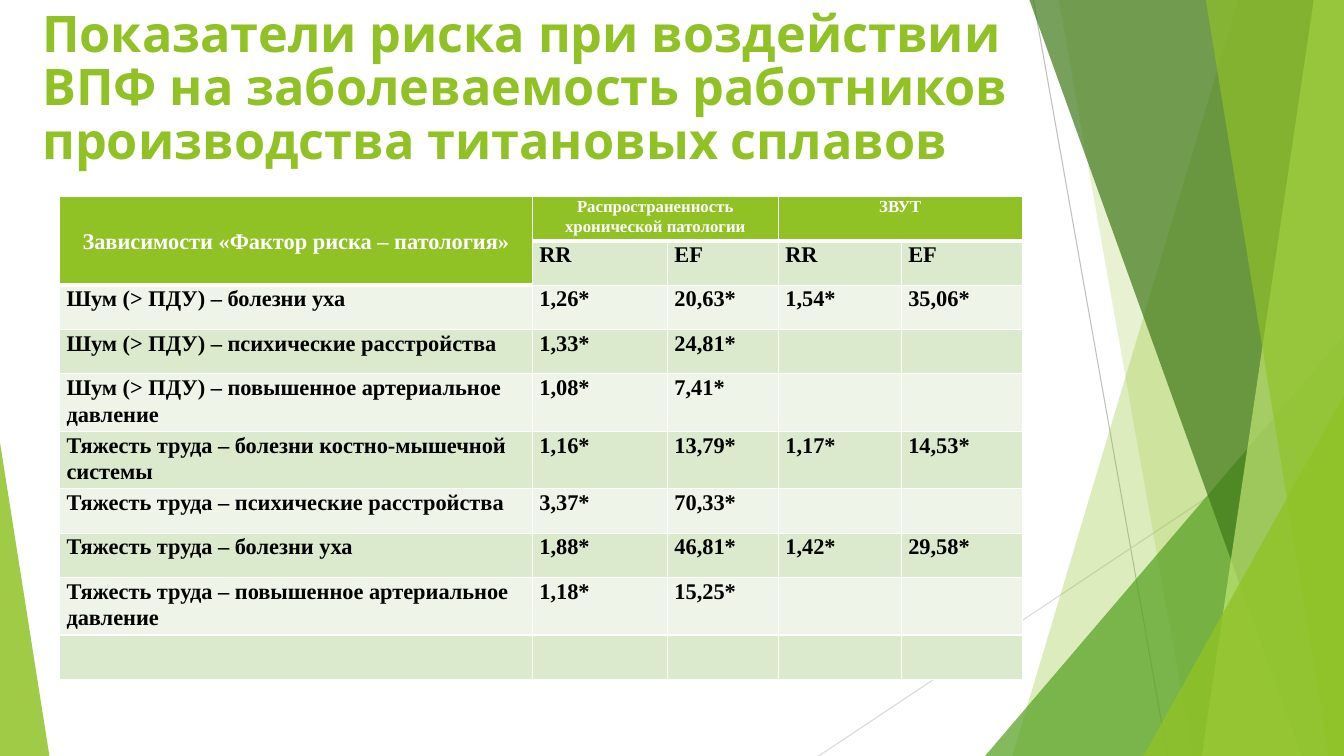
from lxml import etree
from pptx import Presentation
from pptx.dml.color import RGBColor
from pptx.enum.shapes import MSO_CONNECTOR, MSO_SHAPE
from pptx.enum.text import MSO_ANCHOR, PP_ALIGN
from pptx.oxml.ns import qn
from pptx.util import Inches, Pt

STRAIGHT = MSO_CONNECTOR.STRAIGHT
TRIANGLE = MSO_SHAPE.ISOSCELES_TRIANGLE
TOP, MIDDLE = MSO_ANCHOR.TOP, MSO_ANCHOR.MIDDLE
LEFT, CENTER = PP_ALIGN.LEFT, PP_ALIGN.CENTER
GREEN, WHITE, BLACK = "90C226", "FFFFFF", "000000"
BANDS = ["EEF4E8", "DBE9CD"]
SERIF = "Times New Roman"
W, H = 13.33, 7.5


def color(value):
    return RGBColor.from_string(value)


def paint(shape, tint, opacity):
    """Fill a shape with a partly transparent colour, without outline or shadow."""
    shape.shadow.inherit = False
    shape.line.fill.background()
    shape.fill.solid()
    shape.fill.fore_color.rgb = color(tint)
    tint_xml = shape._element.spPr.find(qn("a:solidFill"))[0]
    etree.SubElement(tint_xml, qn("a:alpha"), val=str(opacity * 1000))


prs = Presentation()
prs.slide_width, prs.slide_height = Inches(W), Inches(H)
slide = prs.slides.add_slide(prs.slide_layouts[6])
shapes = slide.shapes

# Thin lines behind the facets
for x1, y1, x2, y2, tint in [(10.25, 0, 11.58, H, "BFBFBF"), (W, 4.03, 8.12, H, "D9D9D9")]:
    ray = shapes.add_connector(STRAIGHT, Inches(x1), Inches(y1), Inches(x2), Inches(y2))
    ray.line.color.rgb = color(tint)
    ray.line.width = Pt(0.75)
    etree.SubElement(ray._element.spPr, qn("a:effectLst"))

# Facets: panes slant from a top x to a bottom x and fill up to the right edge,
# corners are right triangles standing on the bottom edge
facets = [
    ("pane", 12.28, 10.04, GREEN, 30),
    ("pane", 10.5, 11.83, GREEN, 20),
    ("corner", 9.77, 3.56, 4.17, 1, "54A021", 72),
    ("pane", 10.21, 12.91, "3F7819", 70),
    ("pane", 13.03, 11.92, "C0E474", 70),
    ("pane", 11.96, 13.18, GREEN, 65),
    ("corner", 11.34, 1.99, 3.57, 1, GREEN, 80),
    ("corner", 0, 0.49, 3.11, 0, GREEN, 85),
]
for kind, *measures, tint, opacity in facets:
    if kind == "pane":
        top_x, bottom_x = measures
        outline = shapes.build_freeform(Inches(top_x), 0, scale=1.0)
        outline.add_line_segments(
            [(Inches(x), Inches(y)) for x, y in [(W, 0), (W, H), (bottom_x, H)]], close=True)
        facet = outline.convert_to_shape()
    else:
        left, width, height, apex = measures
        facet = shapes.add_shape(
            TRIANGLE, Inches(left), Inches(H - height), Inches(width), Inches(height))
        facet.adjustments[0] = apex
    paint(facet, tint, opacity)

# Title
title = shapes.add_textbox(Inches(0.32), 0, Inches(9.82), Inches(2.11)).text_frame
title.word_wrap = True
title.vertical_anchor = TOP
title.margin_top = Inches(0.1)
heading = title.paragraphs[0]
heading.line_spacing = 0.88
run = heading.add_run()
run.text = ("Показатели риска при воздействии ВПФ на заболеваемость "
            "работников производства титановых сплавов")
run.font.name, run.font.size, run.font.bold = "Karla", Pt(36), True
run.font.color.rgb = color(GREEN)

# Risk table
risks = [
    ["Зависимости «Фактор риска – патология»",
     "Распространенность хронической патологии", "", "ЗВУТ", ""],
    ["", "RR", "EF", "RR", "EF"],
    ["Шум (> ПДУ) – болезни уха", "1,26*", "20,63*", "1,54*", "35,06*"],
    ["Шум (> ПДУ) – психические расстройства", "1,33*", "24,81*", "", ""],
    ["Шум (> ПДУ) – повышенное артериальное давление", "1,08*", "7,41*", "", ""],
    ["Тяжесть труда – болезни костно-мышечной системы",
     "1,16*", "13,79*", "1,17*", "14,53*"],
    ["Тяжесть труда – психические расстройства", "3,37*", "70,33*", "", ""],
    ["Тяжесть труда – болезни уха", "1,88*", "46,81*", "1,42*", "29,58*"],
    ["Тяжесть труда – повышенное артериальное давление", "1,18*", "15,25*", "", ""],
    [""] * 5,
]
column_widths = [4.69, 1.34, 1.1, 1.22, 1.2]
row_height = 0.44
table = shapes.add_table(
    len(risks), len(column_widths), Inches(0.59), Inches(1.95),
    Inches(sum(column_widths)), Inches(row_height * len(risks))).table
table.first_row = table.horz_banding = False
for column, width in zip(table.columns, column_widths):
    column.width = Inches(width)
for row in table.rows:
    row.height = Inches(row_height)
for (r1, c1), (r2, c2) in [((0, 0), (1, 0)), ((0, 1), (0, 2)), ((0, 3), (0, 4))]:
    table.cell(r1, c1).merge(table.cell(r2, c2))

for r, row in enumerate(risks):
    for c, words in enumerate(row):
        cell = table.cell(r, c)
        corner = c == 0 and r < 2
        header = r == 0 or corner

        # White rules, thicker below the header
        for side in ("L", "R", "T", "B"):
            weight = 3 if header and side == "B" else 1
            rule = etree.SubElement(cell._tc.get_or_add_tcPr(), qn("a:ln" + side),
                                    w=str(Pt(weight)))
            etree.SubElement(etree.SubElement(rule, qn("a:solidFill")),
                             qn("a:srgbClr"), val=WHITE)
        cell.fill.solid()
        cell.fill.fore_color.rgb = color(GREEN if header else BANDS[r % 2])

        if not words:
            continue
        cell.margin_left = cell.margin_right = Inches(0.07)
        cell.margin_top = cell.margin_bottom = 0
        cell.vertical_anchor = MIDDLE if corner else TOP
        paragraph = cell.text_frame.paragraphs[0]
        paragraph.alignment = CENTER if header else LEFT
        paragraph.line_spacing = 1.07
        run = paragraph.add_run()
        run.text = words
        run.font.name, run.font.bold = SERIF, True
        run.font.size = Pt(12 if header and not corner else 16)
        run.font.color.rgb = color(WHITE if header else BLACK)

prs.save("out.pptx")
